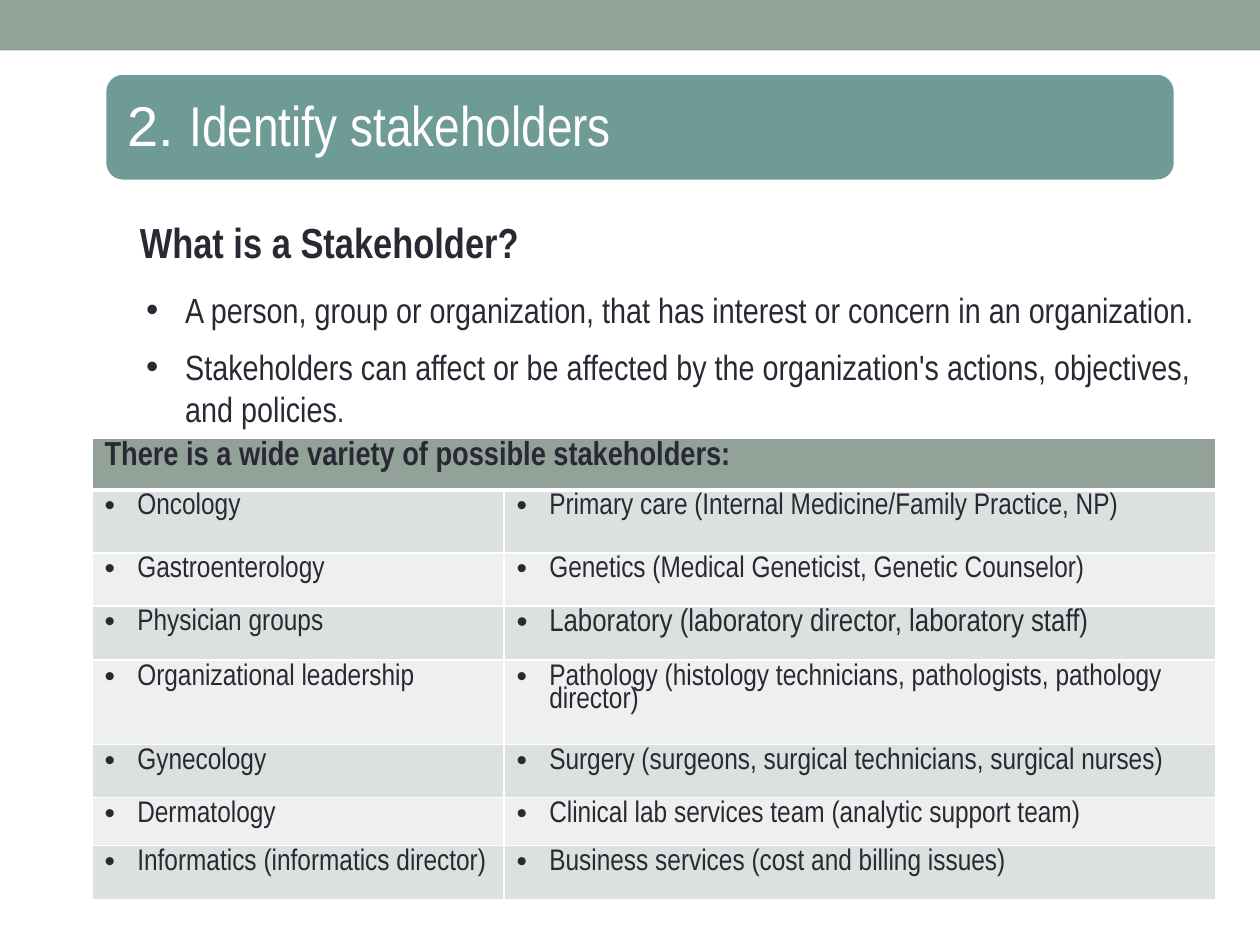
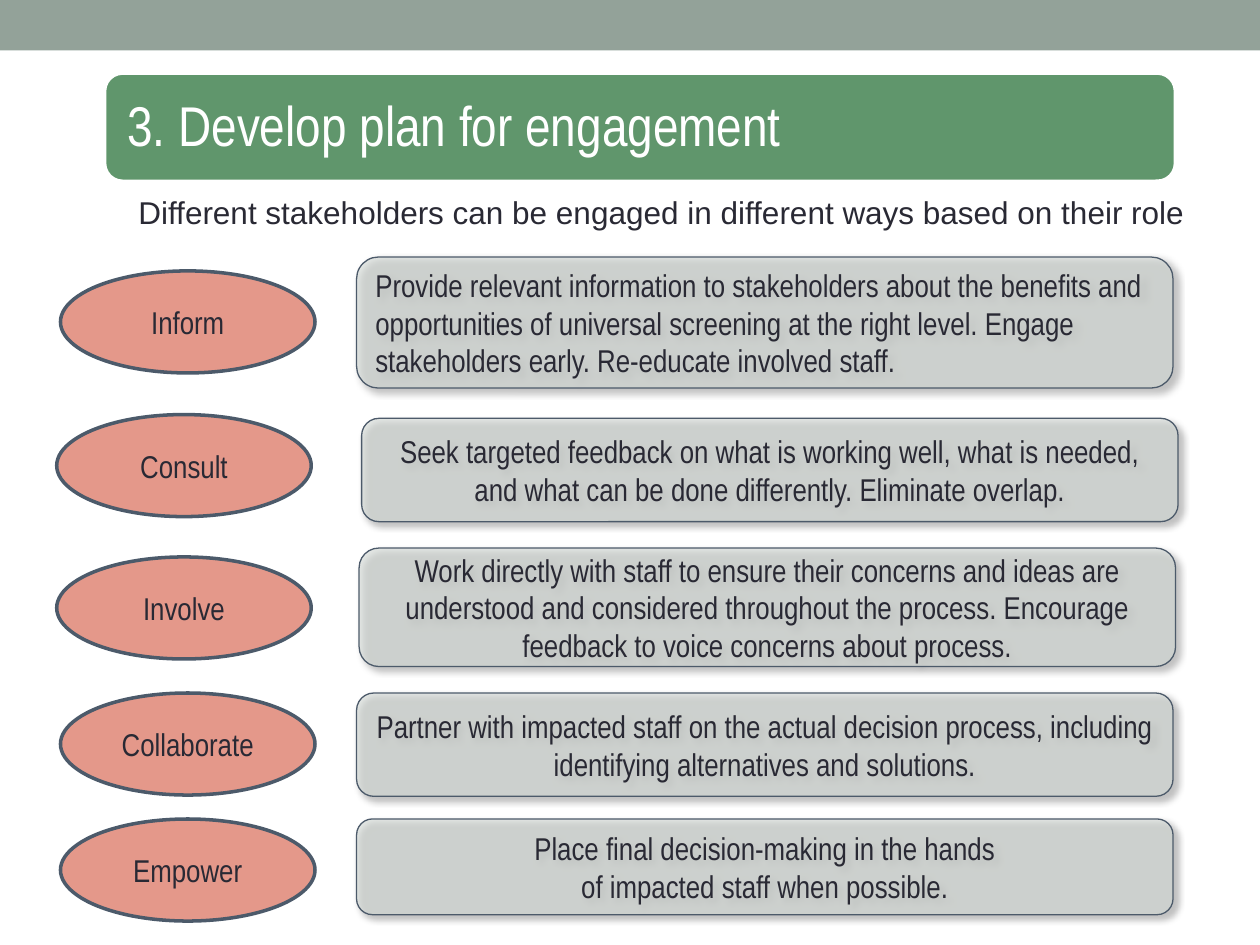
from dataclasses import dataclass
from typing import NamedTuple

from lxml.etree import SubElement
from pptx import Presentation
from pptx.dml.color import RGBColor
from pptx.enum.shapes import MSO_SHAPE
from pptx.enum.text import MSO_ANCHOR, MSO_AUTO_SIZE, PP_ALIGN
from pptx.oxml.ns import qn
from pptx.util import Emu, Inches, Pt

SLIDE_WIDTH, SLIDE_HEIGHT = Inches(10), Inches(7.5)
UNIT = SLIDE_WIDTH // 100
NARROW, ARIAL = "Arial Narrow", "Arial"
WHITE = RGBColor(0xFF, 0xFF, 0xFF)
BLACK = RGBColor(0, 0, 0)
INK = RGBColor(0x29, 0x29, 0x34)
SAGE = RGBColor(0x93, 0xA2, 0x99)
TEAL = RGBColor(0x6F, 0x9B, 0x97)
GREEN = RGBColor(0x60, 0x96, 0x6C)
CORAL = RGBColor(0xE4, 0x98, 0x8A)
SLATE = RGBColor(0x4C, 0x5A, 0x6A)
MIST = RGBColor(0xD4, 0xDA, 0xD6)
ROW_FILLS = (RGBColor(0xDC, 0xE0, 0xDE), RGBColor(0xEE, 0xF0, 0xEF))
BULLET_INDENT = 2.6


class Box(NamedTuple):
    """A place on a grid of 100 columns by 75 rows."""

    left: float
    top: float
    width: float
    height: float

    def emu(self) -> list[Emu]:
        """Return the place in slide units."""
        return [grid(length) for length in self]


class TableRow(NamedTuple):
    """Two stakeholders side by side, with the row height."""

    left: str
    right: str
    height: float
    right_size: float = 17


@dataclass(frozen=True)
class Engagement:
    """One way to engage: an oval label and the card explaining it."""

    label: str
    advice: tuple[str, ...]
    oval_left: float
    oval_top: float
    card_left: float
    card_top: float
    card_height: float
    align: PP_ALIGN = PP_ALIGN.CENTER


BAND = Box(0, 0, 100, 4)
BANNER = Box(8.3, 5.8, 85, 8.6)
TITLE = Box(8.8, 6.3, 84.2, 7.8)
DEFINITION = Box(7.5, 16.7, 89.2, 18.1)
TABLE = Box(7.3, 34.8, 89.2, 36.7)
INTRO = Box(10, 14.8, 86.7, 4)
TABLE_COLUMNS = (32.7, 56.5)
HEADER_HEIGHT = 4.1
OVAL_WIDTH, OVAL_HEIGHT, CARD_WIDTH = 20.2, 8.1, 64.8

STAKEHOLDERS = (
    TableRow("Oncology", "Primary care (Internal Medicine/Family Practice, NP)", 5),
    TableRow("Gastroenterology", "Genetics (Medical Geneticist, Genetic Counselor)", 4.2),
    TableRow("Physician groups", "Laboratory (laboratory director, laboratory staff)", 4.3, 18),
    TableRow("Organizational leadership",
             "Pathology (histology technicians, pathologists, pathology director)", 6.7),
    TableRow("Gynecology", "Surgery (surgeons, surgical technicians, surgical nurses)", 4.2),
    TableRow("Dermatology", "Clinical lab services team (analytic support team)", 3.8),
    TableRow("Informatics (informatics director)",
             "Business services (cost and billing issues)", 4.3),
)

ENGAGEMENTS = (
    Engagement("Inform", (
        "Provide relevant information to stakeholders about the benefits and "
        "opportunities of universal screening at the right level. Engage "
        "stakeholders early. Re-educate involved staff.",),
        4.8, 21.5, 28.3, 20.4, 10.4, PP_ALIGN.LEFT),
    Engagement("Consult", (
        "Seek targeted feedback on what is working well, what is needed, "
        "and what can be done differently. Eliminate overlap.",),
        4.5, 32.9, 28.7, 33.2, 8.2),
    Engagement("Involve", (
        "Work directly with staff to ensure their concerns and ideas are "
        "understood and considered throughout the process. Encourage "
        "feedback to voice concerns about process.",),
        4.5, 44.2, 28.5, 43.5, 9.4),
    Engagement("Collaborate", (
        "Partner with impacted staff on the actual decision process, including "
        "identifying alternatives and solutions.",),
        4.8, 55, 28.3, 55, 8.2),
    Engagement("Empower", (
        "Place final decision-making in the hands",
        "of impacted staff when possible."),
        4.8, 65, 28.3, 65, 7.6),
)


def grid(length: float) -> Emu:
    """Turn grid units into slide units."""
    return Emu(round(length * UNIT))


def add_run(paragraph, text: str, *, size: float = 18, font: str = NARROW,
            color: RGBColor = INK, bold: bool = False) -> None:
    """Append formatted text to a paragraph."""
    run = paragraph.add_run()
    run.text = text
    run.font.size, run.font.name, run.font.bold = Pt(size), font, bold
    run.font.color.rgb = color


def format_paragraph(paragraph, *, align: PP_ALIGN = PP_ALIGN.LEFT, before: float = 0,
                     after: float = 0, spacing: float = 1, margin: float = 0,
                     indent: float = 0, bullet: bool = False) -> None:
    """Set alignment, spacing, indents and bullet."""
    paragraph.alignment, paragraph.line_spacing = align, spacing
    paragraph.space_before, paragraph.space_after = Pt(before), Pt(after)
    properties = paragraph._p.get_or_add_pPr()
    properties.set("marL", str(grid(margin)))
    properties.set("indent", str(grid(indent)))
    if bullet:
        color = SubElement(properties, qn("a:buClr"))
        SubElement(color, qn("a:srgbClr"), val=str(INK))
        SubElement(properties, qn("a:buFont"), typeface=ARIAL)
        SubElement(properties, qn("a:buChar"), char="•")
    else:
        SubElement(properties, qn("a:buNone"))


def add_panel(slide, preset: MSO_SHAPE, box: Box, fill: RGBColor,
              line: RGBColor | None = None, weight: float = 1):
    """Add a flat preset shape with its text centred vertically."""
    panel = slide.shapes.add_shape(preset, *box.emu())
    panel.shadow.inherit = False
    panel.fill.solid()
    panel.fill.fore_color.rgb = fill
    if line is None:
        panel.line.fill.background()
    else:
        panel.line.color.rgb, panel.line.width = line, Pt(weight)
    panel.text_frame.word_wrap = True
    panel.text_frame.vertical_anchor = MSO_ANCHOR.MIDDLE
    return panel


def write_lines(frame, lines: tuple[str, ...], align: PP_ALIGN) -> None:
    """Write each line as a paragraph."""
    for index, line in enumerate(lines):
        paragraph = frame.paragraphs[0] if index == 0 else frame.add_paragraph()
        format_paragraph(paragraph, align=align)
        add_run(paragraph, line)


def place(holder, box: Box):
    """Move a text holder and return its wrapped text frame."""
    holder.left, holder.top, holder.width, holder.height = box.emu()
    frame = holder.text_frame
    frame.word_wrap, frame.auto_size = True, MSO_AUTO_SIZE.NONE
    return frame


def add_banner(slide, fill: RGBColor, *title_parts: tuple[str, str]) -> None:
    """Put the slide title over a rounded banner."""
    banner = add_panel(slide, MSO_SHAPE.ROUNDED_RECTANGLE, BANNER, fill, WHITE, 2.08)
    slide.shapes._spTree.insert(2, banner._element)
    frame = place(slide.shapes.title, TITLE)
    frame.vertical_anchor = MSO_ANCHOR.MIDDLE
    frame.margin_left = frame.margin_right = grid(1.3)
    frame.margin_top = frame.margin_bottom = grid(0.7)
    format_paragraph(frame.paragraphs[0], spacing=0.9)
    for text, font in title_parts:
        add_run(frame.paragraphs[0], text, size=32, font=font, color=WHITE)


def add_master_band(presentation, slide) -> None:
    """Draw the top band and move it to the master."""
    band = add_panel(slide, MSO_SHAPE.RECTANGLE, BAND, SAGE)
    presentation.slide_master.shapes._spTree.insert(2, band._element)


def style_cell(cell, fill: RGBColor, top: float, bottom: float) -> None:
    """Give a table cell white borders and a fill."""
    properties = cell._tc.get_or_add_tcPr()
    for side, weight in (("L", 1), ("R", 1), ("T", top), ("B", bottom)):
        border = SubElement(properties, qn(f"a:ln{side}"), w=str(Pt(weight)))
        SubElement(SubElement(border, qn("a:solidFill")), qn("a:srgbClr"), val=str(WHITE))
    cell.fill.solid()
    cell.fill.fore_color.rgb = fill


def add_stakeholder_table(slide) -> None:
    """Add the table of possible stakeholders."""
    table = slide.shapes.add_table(len(STAKEHOLDERS) + 1, 2, *TABLE.emu()).table
    for column, width in zip(table.columns, TABLE_COLUMNS):
        column.width = grid(width)
    table.rows[0].height = grid(HEADER_HEIGHT)
    for column in range(2):
        style_cell(table.cell(0, column), SAGE, 1, 3)
    header = table.cell(0, 0)
    header.merge(table.cell(0, 1))
    heading = header.text_frame.paragraphs[0]
    format_paragraph(heading, spacing=0.83)
    add_run(heading, "There is a wide variety of possible stakeholders:", size=19, bold=True)
    for index, row in enumerate(STAKEHOLDERS, start=1):
        table.rows[index].height = grid(row.height)
        for column, (text, size) in enumerate(((row.left, 17), (row.right, row.right_size))):
            cell = table.cell(index, column)
            style_cell(cell, ROW_FILLS[(index - 1) % 2], 3 if index == 1 else 1, 1)
            entry = cell.text_frame.paragraphs[0]
            format_paragraph(entry, spacing=0.83, margin=BULLET_INDENT,
                             indent=-BULLET_INDENT, bullet=True)
            add_run(entry, text, size=size)


def build_stakeholders(slide) -> None:
    """Define stakeholders and list them."""
    add_banner(slide, TEAL, ("2. ", ARIAL), ("Identify stakeholders", NARROW))
    frame = place(slide.placeholders[1], DEFINITION)
    question = frame.paragraphs[0]
    format_paragraph(question, after=6, indent=BULLET_INDENT)
    add_run(question, "What is a Stakeholder?", size=24, bold=True)
    definitions = (
        ("A person, group or organization, that has interest or concern in an organization.", 3),
        ("Stakeholders can affect or be affected by the organization's actions, "
         "objectives, and policies", 6),
    )
    for text, after in definitions:
        definition = frame.add_paragraph()
        format_paragraph(definition, before=6, after=after, margin=6.2, indent=-3.1, bullet=True)
        add_run(definition, text, size=20)
    add_run(definition, ".")
    add_stakeholder_table(slide)


def add_card(slide, step: Engagement) -> None:
    """Add a translucent card with a soft shadow."""
    box = Box(step.card_left, step.card_top, CARD_WIDTH, step.card_height)
    card = add_panel(slide, MSO_SHAPE.ROUNDED_RECTANGLE, box, MIST, SLATE, 0.75)
    properties = card._element.spPr
    fill_color = properties.find(f"{qn('a:solidFill')}/{qn('a:srgbClr')}")
    SubElement(fill_color, qn("a:alpha"), val="60000")
    shadow = SubElement(properties.find(qn("a:effectLst")), qn("a:outerShdw"),
                        blurRad=str(Pt(4)), dist=str(Pt(3)), dir=str(45 * 60000),
                        algn="tl", rotWithShape="0")
    shadow_color = SubElement(shadow, qn("a:srgbClr"), val=str(BLACK))
    SubElement(shadow_color, qn("a:alpha"), val="40000")
    write_lines(card.text_frame, step.advice, step.align)


def build_engagement(slide) -> None:
    """Show the five ways to engage stakeholders."""
    add_banner(slide, GREEN, ("3. Develop plan for engagement", NARROW))
    for step in ENGAGEMENTS:
        box = Box(step.oval_left, step.oval_top, OVAL_WIDTH, OVAL_HEIGHT)
        oval = add_panel(slide, MSO_SHAPE.OVAL, box, CORAL, SLATE, 2)
        write_lines(oval.text_frame, (step.label,), PP_ALIGN.CENTER)
        add_card(slide, step)
    intro = place(slide.shapes.add_textbox(*INTRO.emu()), INTRO)
    add_run(intro.paragraphs[0],
            "Different stakeholders can be engaged in different ways based on their role",
            font=ARIAL)


def main() -> None:
    """Build and save the presentation."""
    presentation = Presentation()
    presentation.slide_width, presentation.slide_height = SLIDE_WIDTH, SLIDE_HEIGHT
    stakeholders = presentation.slides.add_slide(presentation.slide_layouts[1])
    add_master_band(presentation, stakeholders)
    build_stakeholders(stakeholders)
    build_engagement(presentation.slides.add_slide(presentation.slide_layouts[5]))
    presentation.save("out.pptx")


if __name__ == "__main__":
    main()
